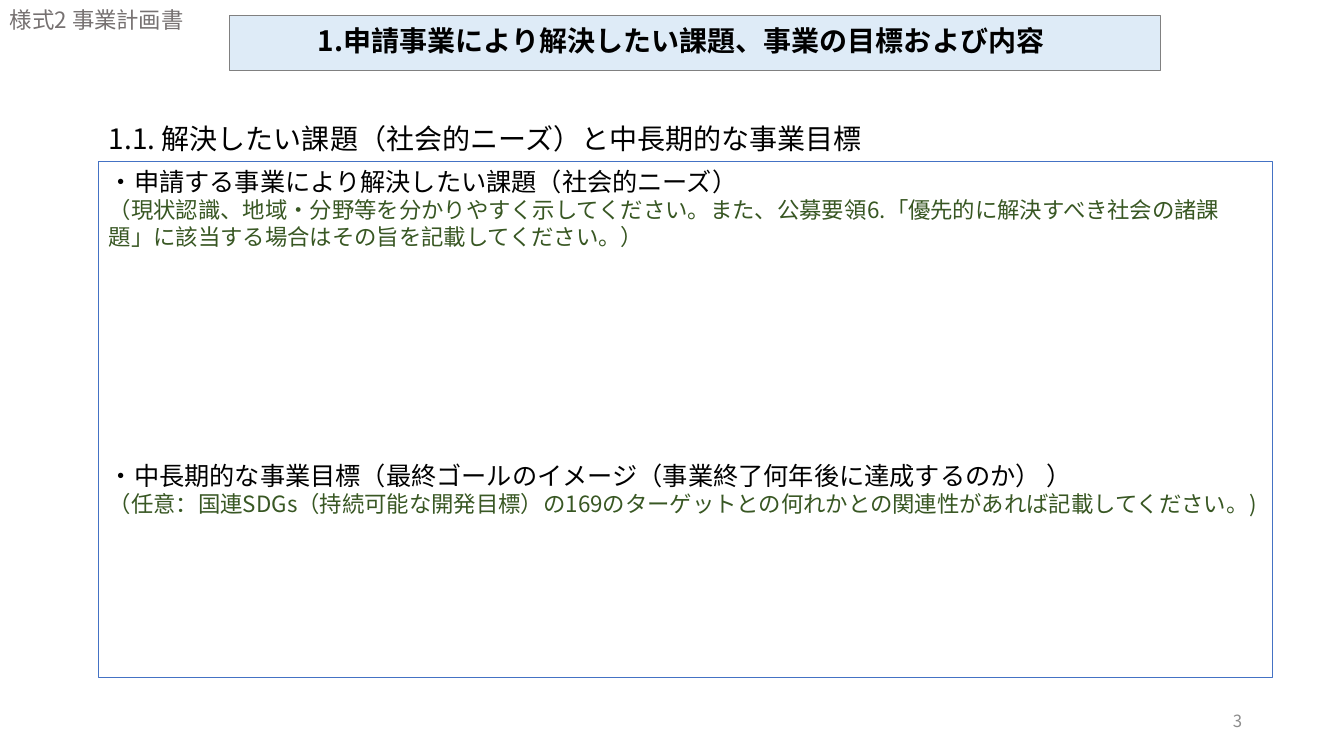
import lxml.etree
import pptx
import pptx.dml.color
import pptx.enum.text
import pptx.oxml.ns
import pptx.util

Inches = pptx.util.Inches
Pt = pptx.util.Pt
ALIGN = pptx.enum.text.PP_ALIGN
ANCHOR = pptx.enum.text.MSO_ANCHOR

FONT = "Noto Sans CJK JP"
BLACK = "000000"
GUIDANCE_GREEN = "385723"

SECTIONS = [
    ("・申請する事業により解決したい課題（社会的ニーズ）",
     "（現状認識、地域・分野等を分かりやすく示してください。また、公募要領6."
     "「優先的に解決すべき社会の諸課題」に該当する場合はその旨を記載してください。）"),
    ("・中長期的な事業目標（最終ゴールのイメージ（事業終了何年後に達成するのか） ）",
     "（任意：国連SDGs（持続可能な開発目標）の169のターゲットとの"
     "何れかとの関連性があれば記載してください。)"),
]
ANSWER_SPACE = 150


def color(hex_value):
    return pptx.dml.color.RGBColor.from_string(hex_value)


def place(shape, box):
    shape.left, shape.top, shape.width, shape.height = map(Inches, box)


def outline(shape, line_color):
    shape.line.color.rgb = color(line_color)
    shape.line.width = Pt(0.75)


def prepare_frame(shape, anchor):
    frame = shape.text_frame
    frame.word_wrap = True
    frame.auto_size = pptx.enum.text.MSO_AUTO_SIZE.NONE
    frame.vertical_anchor = anchor
    return frame


def write(paragraph, text, size, text_color, bold=False, align=ALIGN.LEFT):
    """Fill a paragraph and set its Latin and East Asian font."""
    paragraph.text = text
    paragraph.alignment = align
    font = paragraph.font
    font.size = Pt(size)
    font.bold = bold
    font.color.rgb = color(text_color)
    font.name = FONT
    properties = paragraph._p.pPr.find(pptx.oxml.ns.qn("a:defRPr"))
    east_asian = lxml.etree.SubElement(properties, pptx.oxml.ns.qn("a:ea"))
    east_asian.set("typeface", FONT)


def remove_bullet(paragraph):
    properties = paragraph._p.pPr
    properties.set("marL", "0")
    properties.set("indent", "0")
    bullet = properties.makeelement(pptx.oxml.ns.qn("a:buNone"), {})
    properties.find(pptx.oxml.ns.qn("a:defRPr")).addprevious(bullet)


def add_label(slide, box, text, size, text_color, align=ALIGN.LEFT, anchor=ANCHOR.TOP):
    label = slide.shapes.add_textbox(*map(Inches, box))
    frame = prepare_frame(label, anchor)
    write(frame.paragraphs[0], text, size, text_color, align=align)


def fill_title(slide, box, text):
    title = slide.shapes.title
    place(title, box)
    title.fill.solid()
    title.fill.fore_color.rgb = color("DEEBF7")
    outline(title, "808080")
    paragraph = prepare_frame(title, ANCHOR.MIDDLE).paragraphs[0]
    write(paragraph, text, 20, BLACK, bold=True, align=ALIGN.CENTER)
    paragraph.line_spacing = 0.9


def fill_answer_box(slide, box, sections):
    """Put each heading and its guidance in the body, leaving room for answers."""
    body = slide.placeholders[1]
    place(body, box)
    outline(body, "4472C4")
    frame = prepare_frame(body, ANCHOR.TOP)
    for index, (heading, guidance) in enumerate(sections):
        first = frame.add_paragraph() if index else frame.paragraphs[0]
        second = frame.add_paragraph()
        write(first, heading, 18, BLACK)
        write(second, guidance, 16, GUIDANCE_GREEN)
        first.space_before = Pt(ANSWER_SPACE if index else 0)
        second.space_before = Pt(0)
        remove_bullet(first)
        remove_bullet(second)


def build_plan_slide(presentation):
    slide = presentation.slides.add_slide(presentation.slide_layouts[1])
    add_label(slide, (9.42, 6.95, 3, 0.4), "3", 12, "8C8C8C", ALIGN.RIGHT, ANCHOR.MIDDLE)
    add_label(slide, (0, 0.01, 1.96, 0.37), "様式2 事業計画書", 16, "767171")
    fill_title(slide, (2.28, 0.15, 9.23, 0.55),
               "1.申請事業により解決したい課題、事業の目標および内容　")
    add_label(slide, (0.98, 1.16, 8.41, 0.44),
              "1.1. 解決したい課題（社会的ニーズ）と中長期的な事業目標", 20, BLACK)
    fill_answer_box(slide, (0.98, 1.6, 11.64, 5.12), SECTIONS)


def main():
    presentation = pptx.Presentation()
    presentation.slide_width = Inches(13.33)
    presentation.slide_height = Inches(7.5)
    build_plan_slide(presentation)
    presentation.save("out.pptx")


if __name__ == "__main__":
    main()
